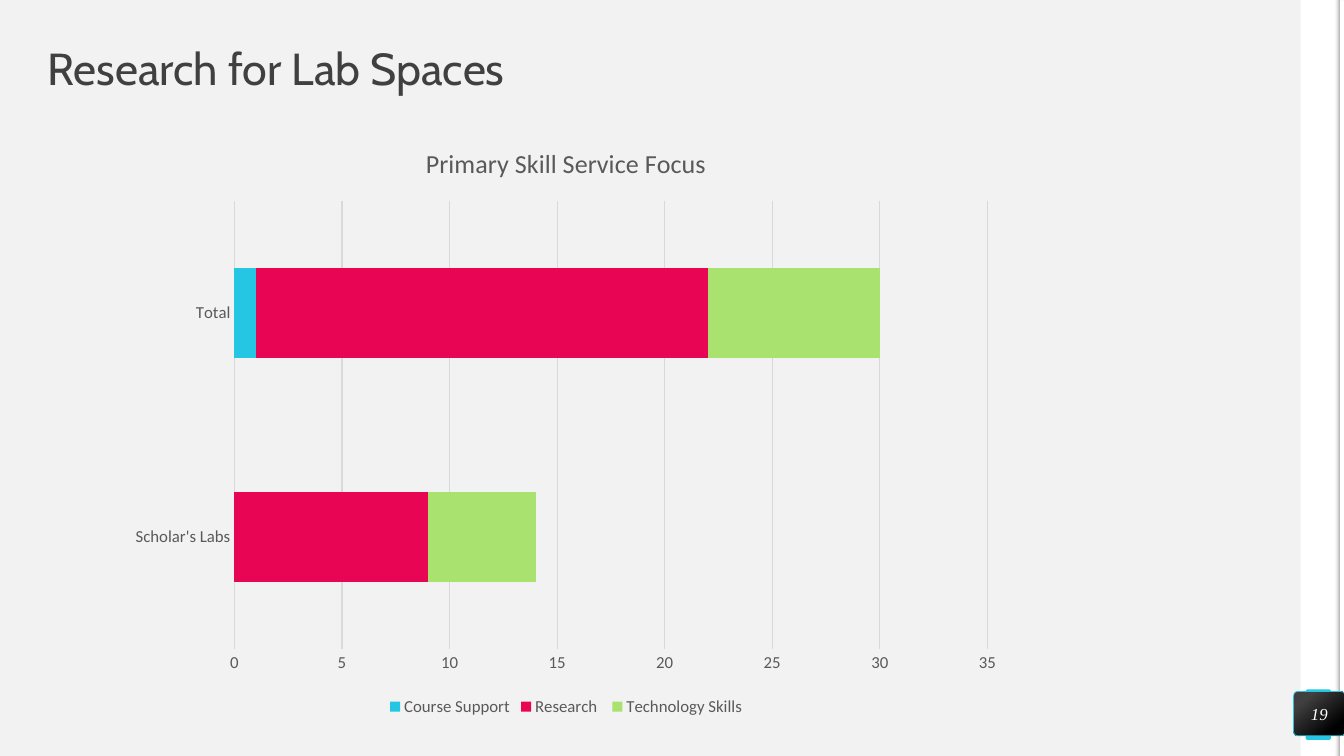
from dataclasses import dataclass
from typing import Optional

from pptx import Presentation
from pptx import util as u
from pptx.chart import data as chart_data
from pptx.dml.color import RGBColor
from pptx.enum import chart as ce
from pptx.enum import shapes, text
from pptx.oxml import parse_xml
from pptx.oxml.ns import nsdecls, qn

BACKGROUND = RGBColor(0xF2, 0xF2, 0xF2)
WHITE = RGBColor(0xFF, 0xFF, 0xFF)
BLACK = RGBColor(0, 0, 0)
SHADE = RGBColor(0xA6, 0xA6, 0xA6)
DARK = RGBColor(0x40, 0x40, 0x40)
LABEL = RGBColor(0x59, 0x59, 0x59)
GRID = RGBColor(0xD9, 0xD9, 0xD9)
CYAN = RGBColor(0x25, 0xC6, 0xE3)
PINK = RGBColor(0xE8, 0x05, 0x54)
GREEN = RGBColor(0xA9, 0xE2, 0x6F)

RECT = shapes.MSO_SHAPE.RECTANGLE
ROUND = shapes.MSO_SHAPE.ROUNDED_RECTANGLE


@dataclass
class Stop:
    position: float
    color: RGBColor
    alpha: Optional[int] = None


@dataclass
class Panel:
    left: float
    top: float
    width: float
    height: float
    fill: Optional[RGBColor] = None
    stops: tuple[Stop, ...] = ()
    angle: float = 0
    corner: Optional[float] = None
    rotation: float = 0
    outline: Optional[RGBColor] = None


@dataclass
class SkillSeries:
    name: str
    values: tuple[int, ...]
    color: RGBColor


PANELS = [
    Panel(12.9, 0, 0.39, 7.5, WHITE),
    Panel(12.95, 6.84, 0.25, 0.5, CYAN, corner=0.074),
    Panel(9.56, 3.73, 7.5, 0.05, WHITE, rotation=90),
    Panel(9.51, 3.73, 7.5, 0.05, rotation=90, angle=90,
          stops=(Stop(0, BACKGROUND, 0), Stop(1, SHADE))),
]
PAGE_BADGE = Panel(12.83, 6.86, 0.51, 0.44, corner=0.095, outline=CYAN, angle=310,
                   stops=(Stop(0.2, DARK), Stop(0.82, BLACK)))
SKILLS = [
    SkillSeries("Course Support", (0, 1), CYAN),
    SkillSeries("Research ", (9, 21), PINK),
    SkillSeries("Technology Skills", (5, 8), GREEN),
]


def set_font(font, size: float, color: RGBColor, name: str = "Calibri",
             italic: bool = False) -> None:
    font.size, font.name = u.Pt(size), name
    font.bold, font.italic = False, italic
    font.color.rgb = color


def write(shape, wording: str, *, size: float, color: RGBColor, font: str,
          italic: bool = False, align=text.PP_ALIGN.LEFT, spacing: float = 1.0) -> None:
    frame = shape.text_frame
    frame.word_wrap = True
    frame.vertical_anchor = text.MSO_ANCHOR.MIDDLE
    frame.margin_left = frame.margin_right = frame.margin_top = frame.margin_bottom = 0
    paragraph = frame.paragraphs[0]
    paragraph.alignment, paragraph.line_spacing = align, spacing
    run = paragraph.add_run()
    run.text = wording
    set_font(run.font, size, color, font, italic)


def fill_gradient(fill, stops: tuple[Stop, ...], angle: float) -> None:
    fill.gradient()
    fill.gradient_angle = angle
    for target, stop in zip(fill.gradient_stops, stops):
        target.position = stop.position
        target.color.rgb = stop.color
    colors = fill._xPr.iter(qn("a:srgbClr"))
    for color, stop in zip(colors, stops):
        if stop.alpha is not None:
            color.append(parse_xml(f'<a:alpha {nsdecls("a")} val="{stop.alpha * 1000}"/>'))


def draw_panel(slide, panel: Panel):
    shape = slide.shapes.add_shape(
        ROUND if panel.corner else RECT, u.Inches(panel.left), u.Inches(panel.top),
        u.Inches(panel.width), u.Inches(panel.height))
    shape.shadow.inherit = False
    shape.rotation = panel.rotation
    if panel.corner:
        shape.adjustments[0] = panel.corner
    if panel.stops:
        fill_gradient(shape.fill, panel.stops, panel.angle)
    else:
        shape.fill.solid()
        shape.fill.fore_color.rgb = panel.fill
    if panel.outline:
        shape.line.color.rgb = panel.outline
        shape.line.width = u.Pt(0.5)
    else:
        shape.line.fill.background()
    return shape


def place_plot(chart, x: float, y: float, w: float, h: float) -> None:
    """Fix the inner plot area, in fractions of the chart."""
    area = chart.element.find(".//" + qn("c:plotArea"))
    for old in area.findall(qn("c:layout")):
        area.remove(old)
    area.insert(0, parse_xml(
        f'<c:layout {nsdecls("c")}><c:manualLayout><c:layoutTarget val="inner"/>'
        '<c:xMode val="edge"/><c:yMode val="edge"/>'
        f'<c:x val="{x}"/><c:y val="{y}"/><c:w val="{w}"/><c:h val="{h}"/>'
        '</c:manualLayout></c:layout>'))


def draw_skill_chart(slide) -> None:
    data = chart_data.CategoryChartData()
    data.categories = ["Scholar's Labs", "Total"]
    for skill in SKILLS:
        data.add_series(skill.name, skill.values)
    chart = slide.shapes.add_chart(
        ce.XL_CHART_TYPE.BAR_STACKED, u.Inches(1.17), u.Inches(1.22),
        u.Inches(8.89), u.Inches(5.93), data).chart
    set_font(chart.font, 10, BLACK)

    chart.has_title = True
    heading = chart.chart_title.text_frame.paragraphs[0].add_run()
    heading.text = "Primary Skill Service Focus"
    set_font(heading.font, 18.6, LABEL)
    chart.chart_title.include_in_layout = False

    chart.has_legend = True
    chart.legend.position = ce.XL_LEGEND_POSITION.BOTTOM
    chart.legend.include_in_layout = False
    set_font(chart.legend.font, 12, LABEL)

    for axis in (chart.category_axis, chart.value_axis):
        axis.major_tick_mark = axis.minor_tick_mark = ce.XL_TICK_MARK.NONE
        set_font(axis.tick_labels.font, 12, LABEL)
    values = chart.value_axis
    values.minimum_scale, values.maximum_scale, values.major_unit = 0, 35, 5
    values.format.line.fill.background()
    values.has_major_gridlines = True
    for line in (chart.category_axis.format.line, values.major_gridlines.format.line):
        line.color.rgb = GRID
        line.width = u.Pt(0.75)

    plot = chart.plots[0]
    plot.gap_width, plot.overlap, plot.vary_by_categories = 150, 100, False
    for series, skill in zip(plot.series, SKILLS):
        series.format.fill.solid()
        series.format.fill.fore_color.rgb = skill.color
        series.invert_if_negative = False
    place_plot(chart, 0.13, 0.13, 0.84, 0.75)


def main() -> None:
    deck = Presentation()
    deck.slide_width, deck.slide_height = u.Inches(13.33), u.Inches(7.5)
    slide = deck.slides.add_slide(deck.slide_layouts[6])
    slide.background.fill.solid()
    slide.background.fill.fore_color.rgb = BACKGROUND

    for panel in PANELS:
        draw_panel(slide, panel)
    title = slide.shapes.add_textbox(u.Inches(0.47), u.Inches(0.47),
                                     u.Inches(12.39), u.Inches(0.47))
    write(title, "Research for Lab Spaces", size=32, color=DARK, font="Cabin", spacing=0.9)
    write(draw_panel(slide, PAGE_BADGE), "19", size=12, color=WHITE,
          font="Times New Roman", italic=True, align=text.PP_ALIGN.CENTER)
    draw_skill_chart(slide)
    deck.save("out.pptx")


if __name__ == "__main__":
    main()
